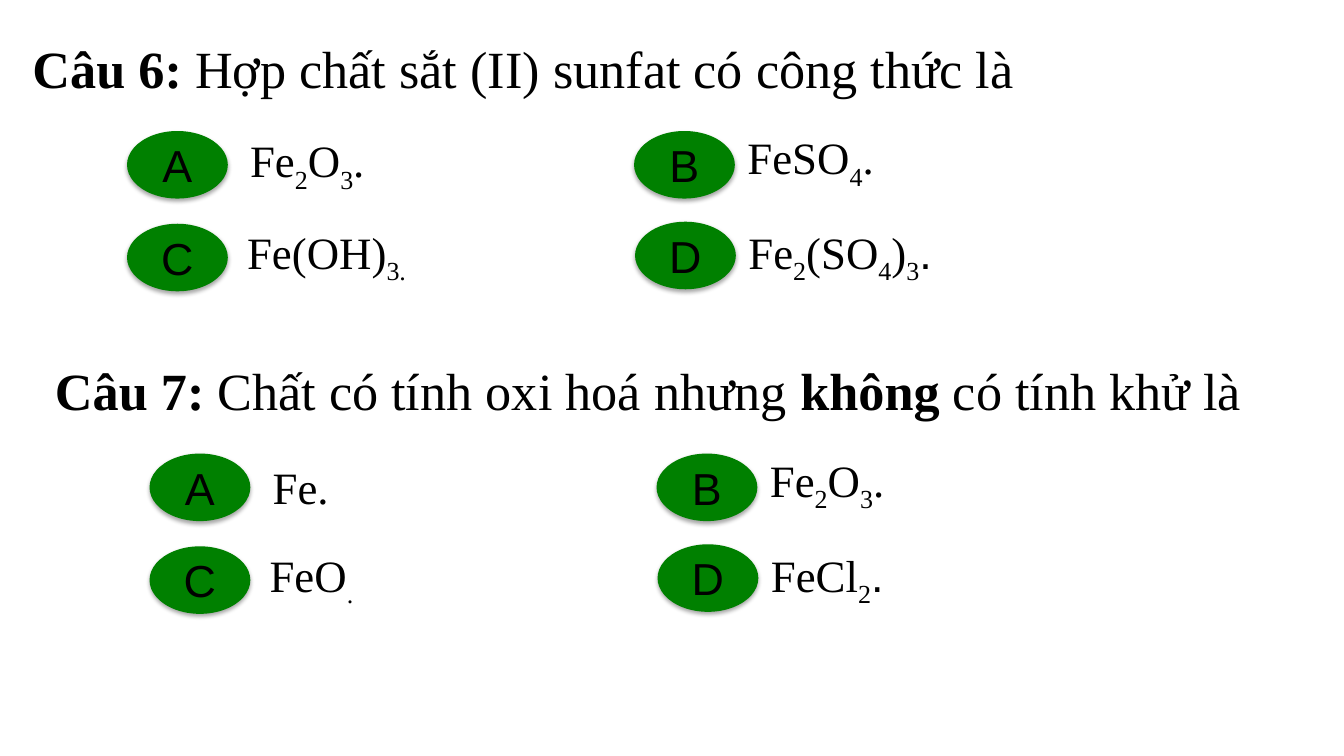
"""Build a chemistry quiz slide with two multiple-choice questions."""

from dataclasses import dataclass
from typing import Any

from lxml import etree
from pptx import Presentation
from pptx.dml.color import RGBColor
from pptx.enum.shapes import MSO_SHAPE
from pptx.enum.text import MSO_ANCHOR, MSO_AUTO_SIZE, PP_ALIGN
from pptx.oxml.ns import qn
from pptx.util import Inches, Pt

OVAL = MSO_SHAPE.OVAL
ROUNDED = MSO_SHAPE.ROUNDED_RECTANGLE
MIDDLE = MSO_ANCHOR.MIDDLE
GROW = MSO_AUTO_SIZE.SHAPE_TO_FIT_TEXT
LEFT = PP_ALIGN.LEFT
CENTER = PP_ALIGN.CENTER

SLIDE_WIDTH = Inches(13.33)
SLIDE_HEIGHT = Inches(7.5)
COLUMN = SLIDE_WIDTH / 40
ROW = SLIDE_HEIGHT / 30

COLORS = {"text": "000000", "badge": "008000", "shadow": "000000"}
SANS = "Arial"
SERIF = "Times New Roman"
TITLE_FORMAT = {"name": SERIF, "size": Pt(37.3)}
CHOICE_FORMAT = {"name": SERIF, "size": Pt(32)}
BADGE_FORMAT = {"name": SANS, "size": Pt(32)}
SHADOW_FORMAT = {"blurRad": "40000", "dist": "23000", "dir": "5400000", "rotWithShape": "0"}


@dataclass(frozen=True)
class Box:
    """Area in grid columns and rows."""

    column: float
    row: float
    columns: float
    rows: float = 2.68

    def place(self, origin: tuple[float, float]) -> list[int]:
        """Return left, top, width and height from a grid origin."""
        return [
            round((origin[0] + self.column) * COLUMN),
            round((origin[1] + self.row) * ROW),
            round(self.columns * COLUMN),
            round(self.rows * ROW),
        ]


@dataclass(frozen=True)
class Choice:
    """Letter badge and the answer area beside it."""

    letter: str
    badge: Box
    answer: Box


@dataclass(frozen=True)
class Question:
    """Title parts, alternately bold and regular, and answer formulas with _subscripts_."""

    origin: tuple[float, float]
    title: list[str]
    formulas: list[str]


TITLE = Box(0.24, 1.24, 39, 2.92)
CHOICES = [
    Choice("A", Box(3.78, 5.2, 3), Box(7.05, 5.16, 6.93)),
    Choice("B", Box(18.87, 5.2, 3), Box(21.85, 5.04, 8.34)),
    Choice("C", Box(3.78, 8.88, 3), Box(6.96, 8.8, 9.42)),
    Choice("D", Box(18.9, 8.8, 3), Box(21.88, 8.8, 6.69)),
]
QUESTIONS = [
    Question(
        (0, 0),
        ["Câu 6: ", "Hợp chất sắt (II) sunfat có công thức là"],
        ["Fe_2_O_3_.", "FeSO_4_.", "Fe(OH)_3._", "Fe_2_(SO_4_)_3_."],
    ),
    Question(
        (0.67, 12.8),
        ["Câu 7: ", "Chất có tính oxi hoá nhưng ", "không ", "có tính khử là"],
        ["Fe.", "Fe_2_O_3_.", "FeO_._", "FeCl_2_."],
    ),
]


def apply_format(target: Any, values: dict[str, Any]) -> None:
    """Set each named attribute on the target."""
    for name, value in values.items():
        setattr(target, name, value)


def add_run(paragraph: Any, text: str, values: dict[str, Any]) -> Any:
    """Add a formatted run in the text colour."""
    run = paragraph.add_run()
    run.text = text
    apply_format(run.font, values)
    run.font.color.rgb = RGBColor.from_string(COLORS["text"])
    return run


def add_shadow(shape: Any) -> None:
    """Give a shape a soft shadow below it."""
    effects = shape._element.spPr.find(qn("a:effectLst"))
    shadow = etree.SubElement(effects, qn("a:outerShdw"), SHADOW_FORMAT)
    color = etree.SubElement(shadow, qn("a:srgbClr"), {"val": COLORS["shadow"]})
    etree.SubElement(color, qn("a:alpha"), {"val": "35000"})


def add_shape(slide: Any, kind: Any, position: list[int], alignment: Any) -> Any:
    """Add a plain unfilled shape ready for text."""
    shape = slide.shapes.add_shape(kind, *position)
    shape.shadow.inherit = False
    shape.fill.background()
    shape.line.fill.background()
    apply_format(shape.text_frame, {"word_wrap": True, "vertical_anchor": MIDDLE})
    shape.text_frame.paragraphs[0].alignment = alignment
    return shape


def add_title(slide: Any, question: Question) -> None:
    """Add the question line."""
    text_box = slide.shapes.add_textbox(*TITLE.place(question.origin))
    apply_format(text_box.text_frame, {"word_wrap": True, "auto_size": GROW})
    paragraph = text_box.text_frame.paragraphs[0]
    add_run(paragraph, " ", {**TITLE_FORMAT, "name": SANS})
    for index, text in enumerate(question.title):
        add_run(paragraph, text, {**TITLE_FORMAT, "bold": index % 2 == 0})


def add_badge(slide: Any, choice: Choice, origin: tuple[float, float]) -> None:
    """Add the green oval with the letter of a choice."""
    badge = add_shape(slide, OVAL, choice.badge.place(origin), CENTER)
    badge.fill.solid()
    badge.fill.fore_color.rgb = RGBColor.from_string(COLORS["badge"])
    add_shadow(badge)
    add_run(badge.text_frame.paragraphs[0], choice.letter, BADGE_FORMAT)


def add_answer(slide: Any, choice: Choice, formula: str, origin: tuple[float, float]) -> None:
    """Add the formula of a choice, with a sans full stop in choice D."""
    answer = add_shape(slide, ROUNDED, choice.answer.place(origin), LEFT)
    for index, text in enumerate(formula.split("_")):
        if not text:
            continue
        font_name = SANS if choice.letter == "D" and text == "." else SERIF
        run = add_run(answer.text_frame.paragraphs[0], text, {**CHOICE_FORMAT, "name": font_name})
        if index % 2:
            run._r.get_or_add_rPr().set("baseline", "-25000")


def main() -> None:
    """Build and save the presentation."""
    presentation = Presentation()
    apply_format(presentation, {"slide_width": SLIDE_WIDTH, "slide_height": SLIDE_HEIGHT})
    slide = presentation.slides.add_slide(presentation.slide_layouts[6])
    for question in QUESTIONS:
        add_title(slide, question)
        for choice, formula in zip(CHOICES, question.formulas):
            add_badge(slide, choice, question.origin)
            add_answer(slide, choice, formula, question.origin)
    presentation.save("out.pptx")


if __name__ == "__main__":
    main()
